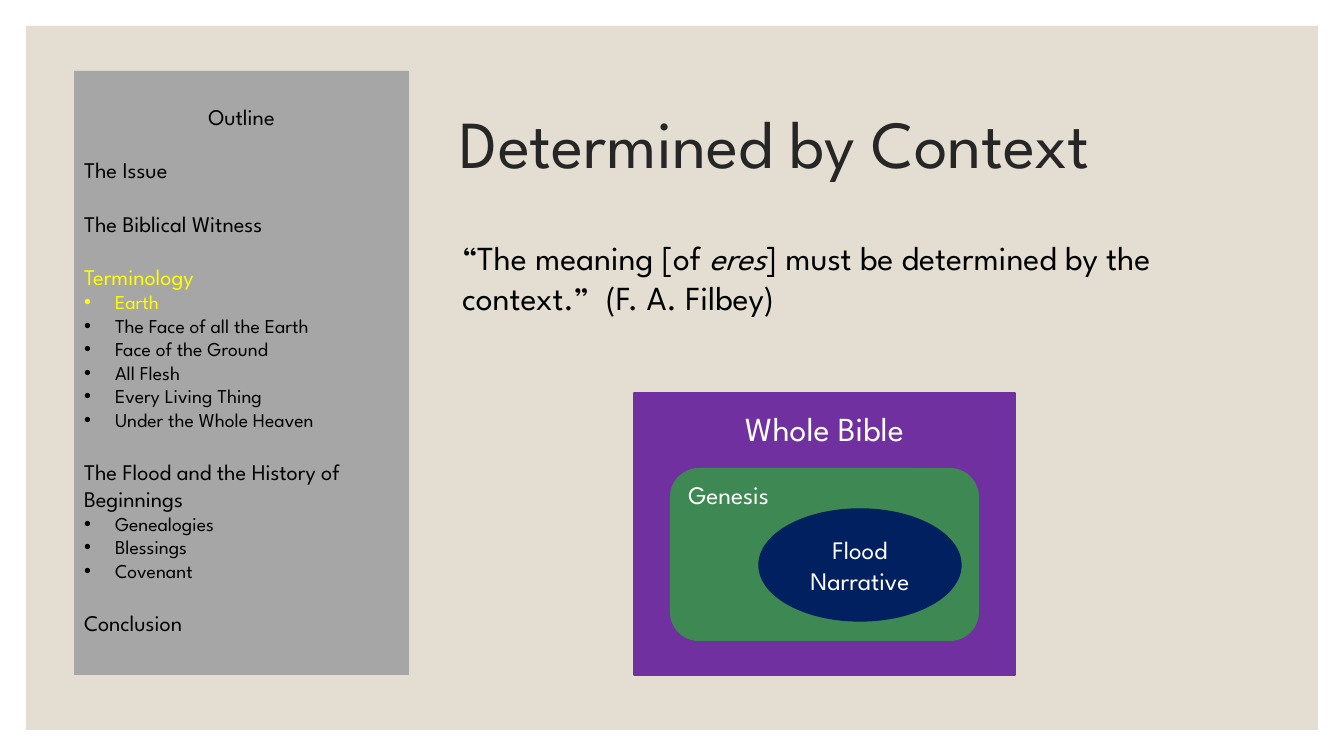
from pptx import Presentation
from pptx.dml.color import RGBColor
from pptx.enum.shapes import MSO_SHAPE
from pptx.enum.text import MSO_ANCHOR, PP_ALIGN
from pptx.oxml.ns import qn
from pptx.util import Pt
from lxml.etree import SubElement

# Content
TITLE = "Determined by Context"
QUOTE = [("“The meaning [of ", False), ("eres", True),
         ("] must be determined by the context.”  (F. A. Filbey)", False)]
OUTLINE_HEADING = "Outline"
OUTLINE = [
    ("The Issue", []),
    ("The Biblical Witness", []),
    ("Terminology", ["Earth", "The Face of all the Earth", "Face of the Ground",
                     "All Flesh", "Every Living Thing", "Under the Whole Heaven"]),
    ("The Flood and the History of Beginnings",
     ["Genealogies", "Blessings", "Covenant"]),
    ("Conclusion", []),
]
CURRENT = {"Terminology", "Earth"}

# Look
COLORS = {"panel": "E3DED1", "sidebar": "A6A6A6", "bible": "7030A0",
          "genesis": "3E8853", "flood": "002060", "title": "262626",
          "black": "000000", "white": "FFFFFF", "current": "FFFF00"}
FONT = "League Spartan"
EMU_PER_PX = 914400 / 100.8
SECTION_GAP = 19  # points
BULLET_INDENT = 31  # px


def px(length):
    return round(length * EMU_PER_PX)


def rgb(name):
    return RGBColor.from_string(COLORS[name])


def add_block(kind, box, fill, outlined=False):
    block = slide.shapes.add_shape(kind, *map(px, box))
    block.shadow.inherit = False
    block.fill.solid()
    block.fill.fore_color.rgb = rgb(fill)
    if outlined:
        block.line.color.rgb = rgb(fill)
        block.line.width = Pt(1)
    else:
        block.line.fill.background()
    return block


def set_up_frame(holder, anchor=MSO_ANCHOR.TOP, top=5):
    frame = holder.text_frame
    frame.word_wrap = True
    frame.vertical_anchor = anchor
    frame.margin_left = frame.margin_right = px(10)
    frame.margin_top, frame.margin_bottom = px(top), px(5)
    return frame


def write(frame, text, size, color="black", align=PP_ALIGN.LEFT,
          before=0, spacing=1.0, bullet=False):
    """Add one paragraph; text is a string or a list of (string, italic)."""
    first = frame.paragraphs[0]
    paragraph = frame.add_paragraph() if first.runs else first
    paragraph.alignment = align
    paragraph.space_before = Pt(before)
    paragraph.line_spacing = spacing
    if bullet:
        properties = paragraph._p.get_or_add_pPr()
        properties.set("marL", str(px(BULLET_INDENT)))
        properties.set("indent", str(-px(BULLET_INDENT)))
        SubElement(properties, qn("a:buFont"), typeface="Arial")
        SubElement(properties, qn("a:buChar"), char="•")
    for words, italic in [(text, False)] if isinstance(text, str) else text:
        run = paragraph.add_run()
        run.text = words
        run.font.name = FONT
        run.font.size = Pt(size)
        run.font.italic = italic
        run.font.color.rgb = rgb(color)


presentation = Presentation()
presentation.slide_width, presentation.slide_height = px(1344), px(756)
slide = presentation.slides.add_slide(presentation.slide_layouts[6])

# Background panel
add_block(MSO_SHAPE.RECTANGLE, (26, 26, 1292, 704), "panel")

# Title and quotation
title = slide.shapes.add_textbox(*map(px, (450, 71, 820, 151)))
write(set_up_frame(title, MSO_ANCHOR.MIDDLE), TITLE, 48, "title", spacing=0.9)
quote = slide.shapes.add_textbox(*map(px, (452, 232, 820, 100)))
write(set_up_frame(quote), QUOTE, 24)

# Outline sidebar
sidebar = add_block(MSO_SHAPE.RECTANGLE, (74, 71, 335, 604), "sidebar")
outline = set_up_frame(sidebar, top=32)
write(outline, OUTLINE_HEADING, 16, align=PP_ALIGN.CENTER)
for section, topics in OUTLINE:
    write(outline, section, 16, "current" if section in CURRENT else "black",
          before=SECTION_GAP)
    for topic in topics:
        write(outline, topic, 14, "current" if topic in CURRENT else "black",
              bullet=True)

# Nested contexts
bible = add_block(MSO_SHAPE.RECTANGLE, (634, 393, 381, 282), "bible", outlined=True)
write(set_up_frame(bible, top=15), "Whole Bible", 24, "white", PP_ALIGN.CENTER)
genesis = add_block(MSO_SHAPE.ROUNDED_RECTANGLE, (670, 468, 309, 173), "genesis")
write(set_up_frame(genesis, top=3), "Genesis", 18, "white")
flood = add_block(MSO_SHAPE.OVAL, (759, 509, 202, 112), "flood", outlined=True)
flood_frame = set_up_frame(flood, MSO_ANCHOR.MIDDLE)
for word in ("Flood", "Narrative"):
    write(flood_frame, word, 18, "white", PP_ALIGN.CENTER)

presentation.save("out.pptx")
